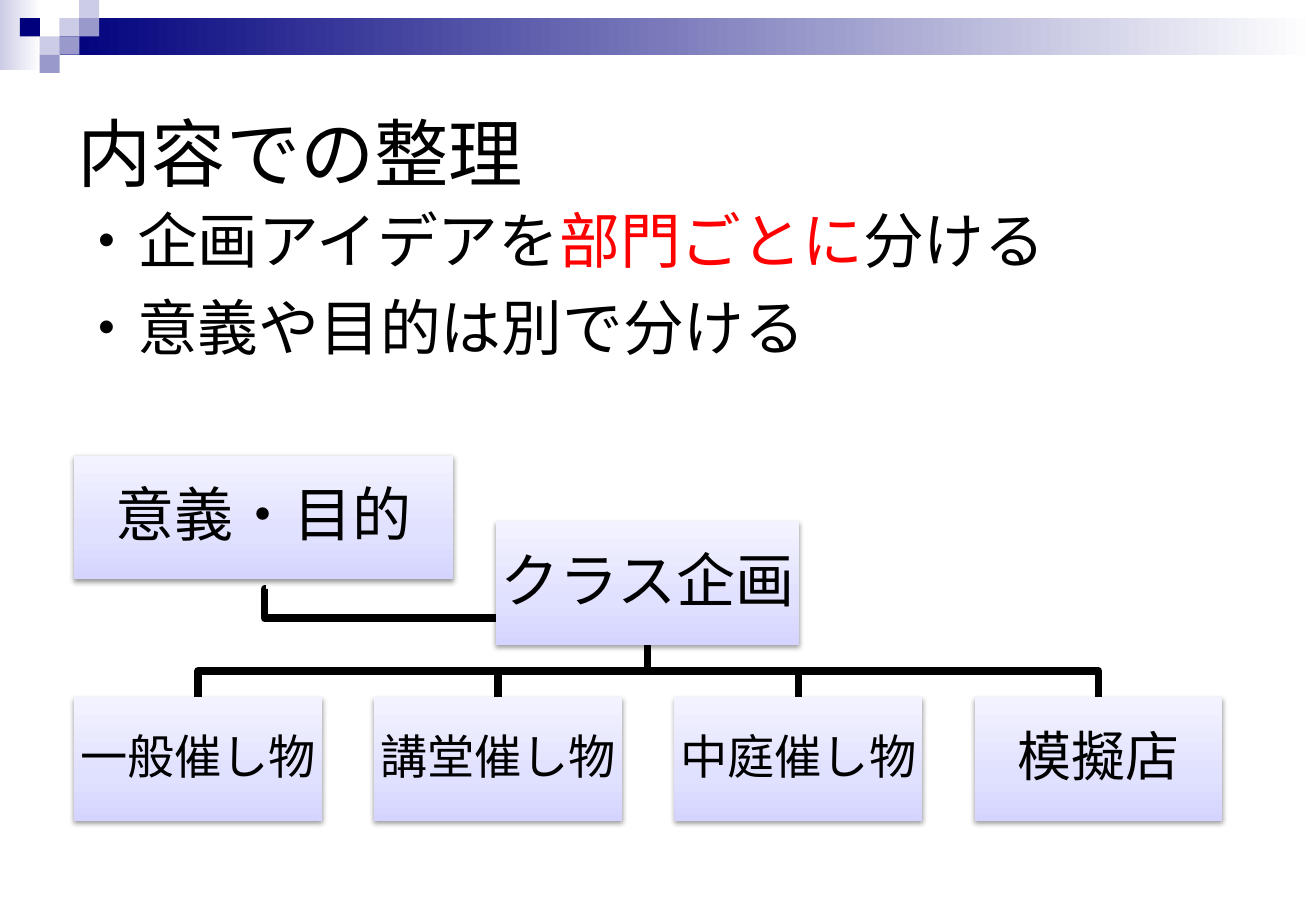
from copy import deepcopy

from lxml.etree import SubElement
from pptx import Presentation
from pptx.dml.color import RGBColor
from pptx.enum.shapes import MSO_CONNECTOR, MSO_SHAPE
from pptx.enum.text import MSO_ANCHOR, PP_ALIGN
from pptx.oxml.ns import qn
from pptx.util import Inches, Pt

COLORS = {
    "black": "000000", "white": "FFFFFF", "red": "FF0000",
    "navy": "00007D", "violet": "9999CC", "lilac": "CCCCE6",
    "box_dark": "D4D4FF", "box_mid": "E0E0FF", "box_light": "F3F3FF",
}
FONT = "Arial"


def write_text(shape, paragraphs, size, align=PP_ALIGN.LEFT, anchor=MSO_ANCHOR.TOP,
               margin=None, space_before=0, line_spacing=1.0):
    """Write paragraphs, each a list of (text, color name) runs."""
    frame = shape.text_frame
    frame.word_wrap = True
    frame.vertical_anchor = anchor
    if margin is not None:
        frame.margin_left = frame.margin_right = Inches(margin)
        frame.margin_top = frame.margin_bottom = Inches(margin)
    for index, runs in enumerate(paragraphs):
        paragraph = frame.paragraphs[0] if index == 0 else frame.add_paragraph()
        paragraph.alignment = align
        paragraph.space_before = Pt(space_before)
        paragraph.line_spacing = line_spacing
        for text, color in runs:
            run = paragraph.add_run()
            run.text = text
            run.font.size = Pt(size)
            run.font.name = FONT
            run.font.color.rgb = RGBColor.from_string(COLORS[color])
            SubElement(run.font._element, qn("a:ea"), typeface=FONT)


def add_rectangle(left, top, width, height, colors, angle=0):
    """Add a borderless rectangle with one color or a gradient of (position, color)."""
    shape = slide.shapes.add_shape(MSO_SHAPE.RECTANGLE, Inches(left), Inches(top),
                                   Inches(width), Inches(height))
    shape.shadow.inherit = False
    shape.line.fill.background()
    if isinstance(colors, str):
        shape.fill.solid()
        shape.fill.fore_color.rgb = RGBColor.from_string(COLORS[colors])
        return shape
    shape.fill.gradient()
    shape.fill.gradient_angle = angle
    stop_list = shape._element.spPr.find(qn("a:gradFill")).find(qn("a:gsLst"))
    while len(stop_list) < len(colors):
        stop_list.append(deepcopy(stop_list[0]))
    for stop, (position, color) in zip(shape.fill.gradient_stops, colors):
        stop.position = position
        stop.color.rgb = RGBColor.from_string(COLORS[color])
    return shape


presentation = Presentation()
presentation.slide_width = Inches(10.83)
presentation.slide_height = Inches(7.5)
slide = presentation.slides.add_slide(presentation.slide_layouts[6])

# Header bands and squares
add_rectangle(0, 0, 0.34, 0.58, [(0, "lilac"), (1, "white")])
add_rectangle(0.49, 0.15, 10.34, 0.3, [(0, "navy"), (1, "white")])
SQUARES = [(3, 1, "lilac"), (4, 0, "lilac"), (4, 1, "violet"), (2, 2, "lilac"),
           (1, 1, "navy"), (3, 2, "violet"), (2, 3, "violet")]
for column, row, color in SQUARES:
    add_rectangle(column * 0.163, row * 0.15, 0.165, 0.15, color)

# Title and bullet lines
title = slide.shapes.add_textbox(Inches(0.54), Inches(0.5), Inches(9.75), Inches(1.5))
write_text(title, [[("内容での整理", "black")]], 44, anchor=MSO_ANCHOR.MIDDLE)
body = slide.shapes.add_textbox(Inches(0.53), Inches(1.62), Inches(9.75), Inches(2.13))
write_text(body, [
    [("・企画アイデアを", "black"), ("部門ごとに", "red"), ("分ける", "black")],
    [("・意義や目的は別で分ける", "black")],
], 36, space_before=8.3)

# Layout of the organization chart
BOX_HEIGHT = 1.02
CHILD_LEFT, CHILD_TOP, CHILD_WIDTH, CHILD_STEP = 0.61, 5.74, 2.04, 2.47
PARENT_LEFT, PARENT_TOP, PARENT_WIDTH = 4.08, 4.29, 2.5
CHILDREN = [("一般催し物", 28), ("講堂催し物", 28), ("中庭催し物", 28), ("模擬店", 32)]
boxes = [("意義・目的", 35, 0.61, 3.75, 3.12),
         ("クラス企画", 35, PARENT_LEFT, PARENT_TOP, PARENT_WIDTH)]

# Branches from the parent to each child
parent_center = PARENT_LEFT + PARENT_WIDTH / 2
parent_bottom = PARENT_TOP + BOX_HEIGHT
branch_level = (parent_bottom + CHILD_TOP) / 2
lines = []
for index, (label, size) in enumerate(CHILDREN):
    left = CHILD_LEFT + index * CHILD_STEP
    boxes.append((label, size, left, CHILD_TOP, CHILD_WIDTH))
    center = left + CHILD_WIDTH / 2
    builder = slide.shapes.build_freeform(Inches(parent_center), Inches(parent_bottom))
    builder.add_line_segments([(Inches(parent_center), Inches(branch_level)),
                               (Inches(center), Inches(branch_level)),
                               (Inches(center), Inches(CHILD_TOP))], close=False)
    branch = builder.convert_to_shape()
    branch.fill.background()
    lines.append(branch)

# Elbow from the purpose box to the parent
elbow = slide.shapes.add_connector(MSO_CONNECTOR.ELBOW, Inches(2.19), Inches(4.85),
                                   Inches(PARENT_LEFT), Inches(5.09))
geometry = elbow._element.spPr.find(qn("a:prstGeom"))
SubElement(geometry.find(qn("a:avLst")), qn("a:gd"), name="adj1", fmla="val -700")
lines.append(elbow)

for line_shape in lines:
    line_shape.line.width = Pt(4.5)
    line_shape.line.color.rgb = RGBColor.from_string(COLORS["black"])
    properties = line_shape._element.spPr
    SubElement(properties.find(qn("a:ln")), qn("a:round"))
    SubElement(properties, qn("a:effectLst"))

# Boxes with a soft shadow
BOX_GRADIENT = [(0, "box_dark"), (0.35, "box_mid"), (1, "box_light")]
for label, size, left, top, width in boxes:
    box = add_rectangle(left, top, width, BOX_HEIGHT, BOX_GRADIENT, angle=90)
    effects = box._element.spPr.find(qn("a:effectLst"))
    shadow = SubElement(effects, qn("a:outerShdw"), blurRad=str(Pt(3.1)),
                        dist=str(Pt(1.6)), dir="5400000", rotWithShape="0")
    shadow_color = SubElement(shadow, qn("a:srgbClr"), val=COLORS["black"])
    SubElement(shadow_color, qn("a:alpha"), val="38000")
    write_text(box, [[(label, "black")]], size, align=PP_ALIGN.CENTER,
               anchor=MSO_ANCHOR.MIDDLE, margin=0.02, line_spacing=0.9)

presentation.save("out.pptx")
